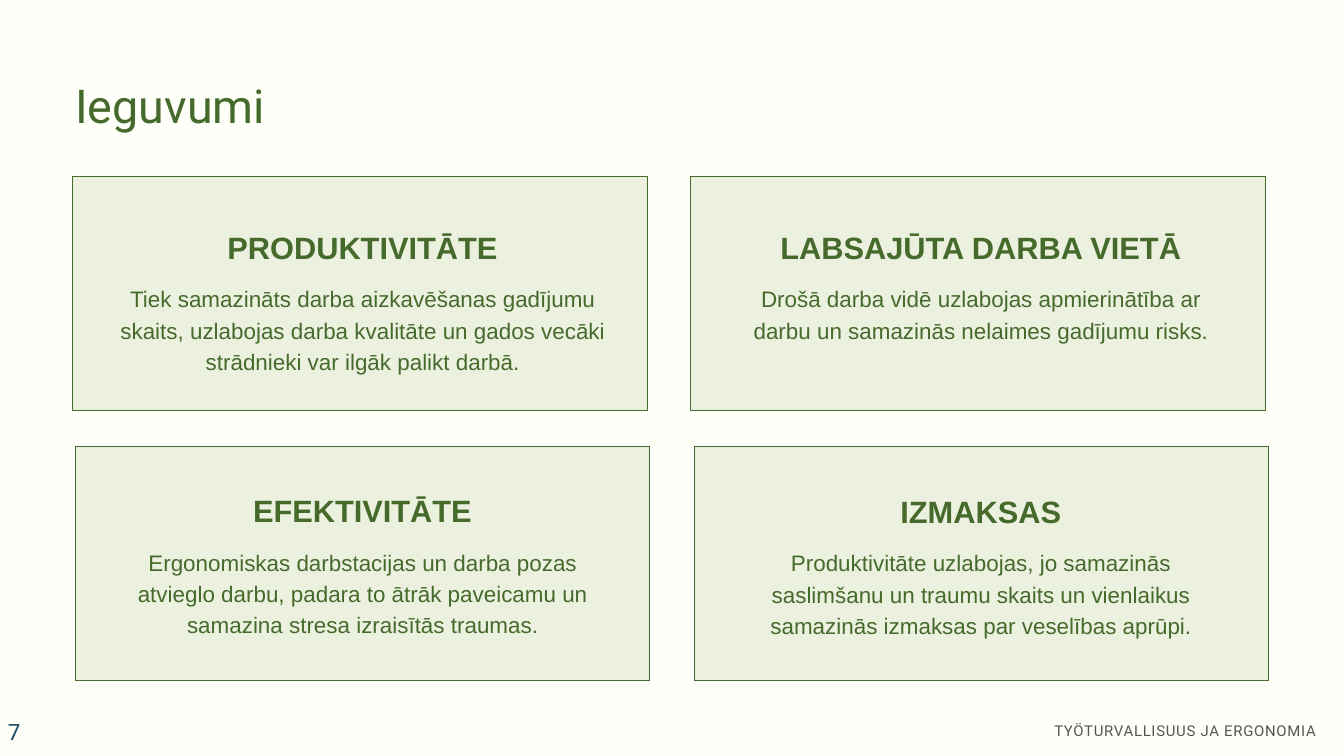
from dataclasses import dataclass

from pptx import Presentation
from pptx.dml.color import RGBColor
from pptx.enum.shapes import MSO_SHAPE
from pptx.enum.text import MSO_ANCHOR, MSO_AUTO_SIZE, PP_ALIGN
from pptx.shapes.autoshape import Shape
from pptx.slide import Slide
from pptx.util import Emu, Pt

RECTANGLE = MSO_SHAPE.RECTANGLE
TOP, MIDDLE = MSO_ANCHOR.TOP, MSO_ANCHOR.MIDDLE
LEFT, CENTER, RIGHT = PP_ALIGN.LEFT, PP_ALIGN.CENTER, PP_ALIGN.RIGHT
NO_AUTOFIT = MSO_AUTO_SIZE.NONE

EMU_PER_PX = 9144
TITLE_ONLY = 5
CARD_WIDTH, CARD_HEIGHT = 855, 348
TEXT_WIDTH, HEADING_HEIGHT, BODY_HEIGHT = 739, 54, 140
HEADING_TO_BODY = 80


@dataclass(frozen=True)
class TextStyle:
    font: str
    size: int
    color: str
    align: PP_ALIGN = LEFT
    line_points: float | None = None
    bold: bool = False
    tracking: int = 0


@dataclass(frozen=True)
class Theme:
    background: str = "FEFFF8"
    card_fill: str = "EBF1DE"
    card_line: str = "456A2C"
    title: TextStyle = TextStyle("Roboto", 50, "456A2C", LEFT, 66.8)
    heading: TextStyle = TextStyle("Arial", 33, "456A2C", CENTER, 41.2, bold=True)
    body: TextStyle = TextStyle("Arial", 24, "456A2C", CENTER, 33.6)
    footer: TextStyle = TextStyle("Roboto", 16, "52584D", RIGHT, 22.4, tracking=80)
    page_number: TextStyle = TextStyle("Roboto", 24, "1E4D65", tracking=120)


@dataclass(frozen=True)
class Card:
    left: int
    top: int
    text_left: int
    text_top: int
    heading: str
    body: str


THEME = Theme()
CARDS = (
    Card(112, 664, 170, 730, "EFEKTIVITĀTE",
         "Ergonomiskas darbstacijas un darba pozas atvieglo darbu, "
         "padara to ātrāk paveicamu un samazina stresa izraisītās traumas."),
    Card(108, 262, 170, 338, "PRODUKTIVITĀTE",
         "Tiek samazināts darba aizkavēšanas gadījumu skaits, uzlabojas darba "
         "kvalitāte un gados vecāki strādnieki var ilgāk palikt darbā."),
    Card(1028, 262, 1090, 338, "LABSAJŪTA DARBA VIETĀ",
         "Drošā darba vidē uzlabojas apmierinātība ar darbu "
         "un samazinās nelaimes gadījumu risks."),
    Card(1033, 664, 1090, 731, "IZMAKSAS",
         "Produktivitāte uzlabojas, jo samazinās saslimšanu un traumu skaits "
         "un vienlaikus samazinās izmaksas par veselības aprūpi."),
)


def px(length: int) -> Emu:
    return Emu(length * EMU_PER_PX)


def rgb(color: str) -> RGBColor:
    return RGBColor.from_string(color)


def write(box: Shape, text: str, style: TextStyle,
          margins: tuple[int, int] = (0, 0), anchor: MSO_ANCHOR = TOP) -> None:
    frame = box.text_frame
    frame.text = text
    frame.word_wrap = True
    frame.auto_size = NO_AUTOFIT
    frame.vertical_anchor = anchor
    frame.margin_left = frame.margin_right = px(margins[0])
    frame.margin_top = frame.margin_bottom = px(margins[1])
    para = frame.paragraphs[0]
    para.alignment = style.align
    para.space_before = Pt(0)
    if style.line_points:
        para.line_spacing = Pt(style.line_points)
    span = para.runs[0]
    span.font.name = style.font
    span.font.size = Pt(style.size)
    span.font.bold = style.bold
    span.font.color.rgb = rgb(style.color)
    if style.tracking:
        span._r.get_or_add_rPr().set("spc", str(style.tracking))


def add_text(page: Slide, left: int, top: int, width: int, height: int) -> Shape:
    return page.shapes.add_textbox(px(left), px(top), px(width), px(height))


def add_title(page: Slide, text: str) -> None:
    title = page.shapes.title
    title.left, title.top = px(112), px(105)
    title.width, title.height = px(1771), px(86)
    write(title, text, THEME.title)


def add_card(page: Slide, card: Card) -> None:
    panel = page.shapes.add_shape(RECTANGLE, px(card.left), px(card.top),
                                  px(CARD_WIDTH), px(CARD_HEIGHT))
    panel.shadow.inherit = False
    panel.fill.solid()
    panel.fill.fore_color.rgb = rgb(THEME.card_fill)
    panel.line.color.rgb = rgb(THEME.card_line)
    panel.line.width = Pt(0.75)
    heading = add_text(page, card.text_left, card.text_top, TEXT_WIDTH, HEADING_HEIGHT)
    write(heading, card.heading, THEME.heading)
    body = add_text(page, card.text_left, card.text_top + HEADING_TO_BODY,
                    TEXT_WIDTH, BODY_HEIGHT)
    write(body, card.body, THEME.body)


def main() -> None:
    deck = Presentation()
    deck.slide_width, deck.slide_height = px(2000), px(1125)
    page = deck.slides.add_slide(deck.slide_layouts[TITLE_ONLY])
    page.background.fill.solid()
    page.background.fill.fore_color.rgb = rgb(THEME.background)
    footer = add_text(page, 1133, 1070, 826, 29)
    write(footer, "TYÖTURVALLISUUS JA ERGONOMIA", THEME.footer)
    add_title(page, "Ieguvumi")
    for card in CARDS:
        add_card(page, card)
    number = add_text(page, 2, 1069, 233, 40)
    write(number, "7", THEME.page_number, margins=(10, 5), anchor=MIDDLE)
    deck.save("out.pptx")


if __name__ == "__main__":
    main()
